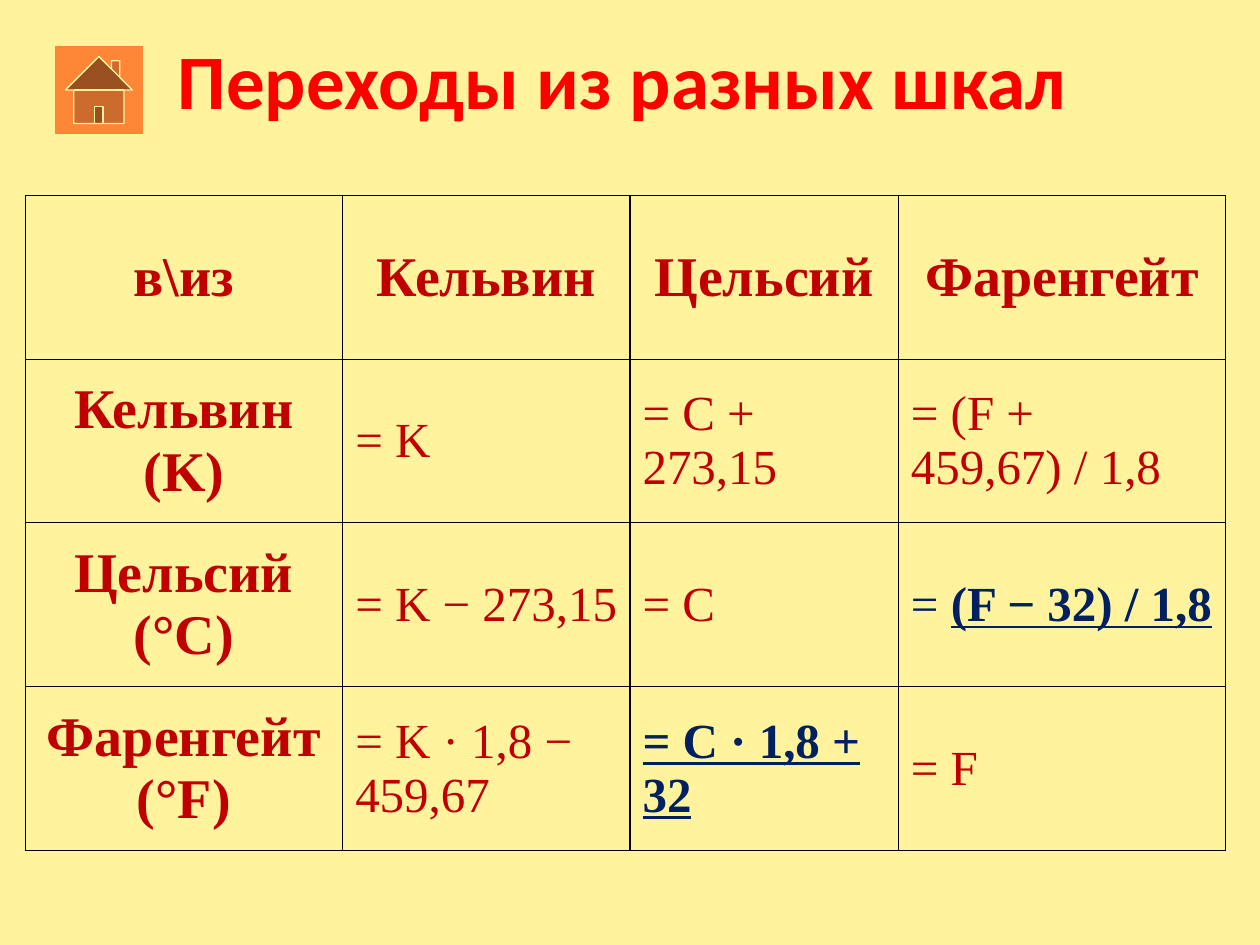
import pptx
import pptx.util
import pptx.dml.color
import pptx.enum.shapes
import pptx.enum.text
import pptx.oxml
import pptx.oxml.ns
from pptx.util import Inches


def color(value):
    return pptx.dml.color.RGBColor.from_string(value)


def add_border(cell, side):
    cell._tc.get_or_add_tcPr().append(pptx.oxml.parse_xml(
        f'<a:{side} {pptx.oxml.ns.nsdecls("a")} w="9525"><a:solidFill>'
        f'<a:srgbClr val="000000"/></a:solidFill></a:{side}>'))


deck = pptx.Presentation()
deck.slide_width = Inches(10)
deck.slide_height = Inches(7.5)
page = deck.slides.add_slide(deck.slide_layouts[5])
page.background.fill.solid()
page.background.fill.fore_color.rgb = color("FFF39D")

title = page.shapes.title
title.left, title.top = Inches(0.51), Inches(0)
title.width, title.height = Inches(9), Inches(1.25)
title.text_frame.text = "Переходы из разных шкал "
title.text_frame.vertical_anchor = pptx.enum.text.MSO_ANCHOR.MIDDLE
para = title.text_frame.paragraphs[0]
para.alignment = pptx.enum.text.PP_ALIGN.CENTER
para.font.name = "Calibri"
para.font.size = pptx.util.Pt(44)
para.font.bold = True
para.font.color.rgb = color("FF0000")

rows = [
    ["в\\из", "Кельвин", "Цельсий", "Фаренгейт"],
    ["Кельвин (K)", "= K", "= С + 273,15", "= (F + 459,67) / 1,8"],
    ["Цельсий (°C)", "= K − 273,15", "= C", "= (F − 32) / 1,8"],
    ["Фаренгейт (°F)", "= K · 1,8 − 459,67", "= C · 1,8 + 32", "= F"],
]
highlights = {(2, 3): ["= ", "(F − 32) / 1,8"], (3, 2): ["", "= C · 1,8 + 32"]}
column_widths = [2.52, 2.28, 2.13, 2.6]

table = page.shapes.add_table(4, 4, Inches(0.2), Inches(1.55), Inches(9.53), Inches(5.2)).table
table.first_row = False
table.horz_banding = False
for column, width in zip(table.columns, column_widths):
    column.width = Inches(width)

for row_index, row in enumerate(rows):
    table.rows[row_index].height = Inches(1.3)
    for column_index, text in enumerate(row):
        cell = table.cell(row_index, column_index)
        for side in ("lnL", "lnR", "lnT", "lnB"):
            add_border(cell, side)
        cell.fill.background()
        cell.vertical_anchor = pptx.enum.text.MSO_ANCHOR.MIDDLE
        is_header = row_index == 0 or column_index == 0
        highlight = highlights.get((row_index, column_index))
        para = cell.text_frame.paragraphs[0]
        if is_header:
            para.alignment = pptx.enum.text.PP_ALIGN.CENTER
        para.font.name = "Times New Roman"
        para.font.size = pptx.util.Pt(32 if is_header else 28)
        para.font.bold = is_header
        para.font.color.rgb = color("002060" if highlight else "C00000")
        if highlight:
            plain, marked = highlight
            if plain:
                para.add_run().text = plain
            span = para.add_run()
            span.text = marked
            span.font.bold = True
            span.font.underline = True
        else:
            para.add_run().text = text

home_button = page.shapes.add_shape(
    pptx.enum.shapes.MSO_SHAPE.ACTION_BUTTON_HOME,
    Inches(0.43), Inches(0.36), Inches(0.71), Inches(0.71))
home_button.shadow.inherit = False
home_button.fill.solid()
home_button.fill.fore_color.rgb = color("FE8637")
home_button.line.color.rgb = color("FFF39D")
home_button.line.width = pptx.util.Pt(0.75)

deck.save("out.pptx")
